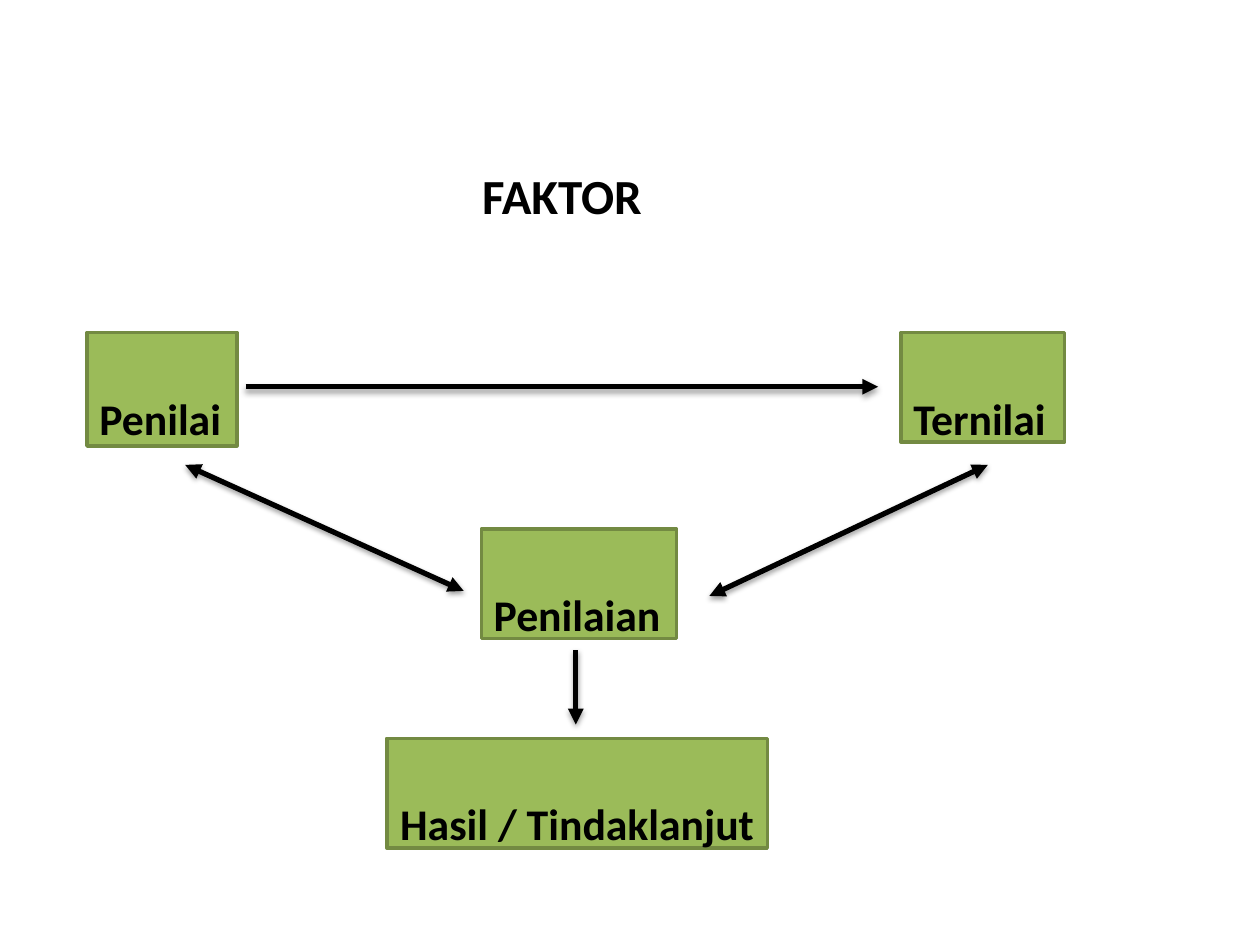
from dataclasses import dataclass

from lxml import etree
from pptx import Presentation
from pptx.dml.color import RGBColor
from pptx.enum.shapes import MSO_CONNECTOR, MSO_SHAPE
from pptx.enum.text import MSO_ANCHOR, PP_ALIGN
from pptx.oxml.ns import qn
from pptx.util import Pt

RECTANGLE = MSO_SHAPE.RECTANGLE
STRAIGHT = MSO_CONNECTOR.STRAIGHT
TOP, MIDDLE = MSO_ANCHOR.TOP, MSO_ANCHOR.MIDDLE
LEFT, CENTER = PP_ALIGN.LEFT, PP_ALIGN.CENTER

COLORS = {"text": "000000", "arrow": "000000", "box": "9BBB59", "border": "738A42"}
FONT = "Calibri"


@dataclass
class Box:
    label: str
    left: float
    top: float
    width: float
    height: float = 62.64
    align: int = LEFT
    wrap: bool = False


@dataclass
class Arrow:
    start: tuple[float, float]
    end: tuple[float, float]
    both_ways: bool = True


def color(key: str) -> RGBColor:
    return RGBColor.from_string(COLORS[key])


def write_label(shape, label: str, size: float, align, anchor, wrap: bool, spacing: float) -> None:
    frame = shape.text_frame
    frame.text = label
    frame.word_wrap = wrap
    frame.vertical_anchor = anchor
    paragraph = frame.paragraphs[0]
    paragraph.alignment = align
    paragraph.line_spacing = spacing
    font = paragraph.runs[0].font
    font.name, font.size, font.bold = FONT, Pt(size), True
    font.color.rgb = color("text")


def draw_box(slide, box: Box) -> None:
    shape = slide.shapes.add_shape(
        RECTANGLE, Pt(box.left), Pt(box.top), Pt(box.width), Pt(box.height))
    shape.shadow.inherit = False
    shape.fill.solid()
    shape.fill.fore_color.rgb = color("box")
    shape.line.color.rgb = color("border")
    shape.line.width = Pt(2)
    write_label(shape, box.label, 25, box.align, TOP, box.wrap, 2.0)


def draw_arrow(slide, arrow: Arrow) -> None:
    points = [Pt(value) for value in arrow.start + arrow.end]
    connector = slide.shapes.add_connector(STRAIGHT, *points)
    connector.line.color.rgb = color("arrow")
    connector.line.width = Pt(3)
    line = connector.line._get_or_add_ln()
    for tag in ("a:headEnd", "a:tailEnd") if arrow.both_ways else ("a:tailEnd",):
        etree.SubElement(line, qn(tag), type="triangle")
    # Soft shadow straight below the line
    effects = etree.SubElement(connector._element.spPr, qn("a:effectLst"))
    shadow = etree.SubElement(
        effects, qn("a:outerShdw"), blurRad=str(Pt(3.1)), dist=str(Pt(1.6)),
        dir="5400000", rotWithShape="0")
    tint = etree.SubElement(shadow, qn("a:srgbClr"), val=COLORS["arrow"])
    etree.SubElement(tint, qn("a:alpha"), val="38000")


BOXES = [
    Box("Penilai", 49.68, 190.08, 85.68, 64.8, wrap=True),
    Box("Ternilai", 514.8, 190.08, 93.6),
    Box("Penilaian", 275.04, 302.4, 111.6),
    Box("Hasil / Tindaklanjut ", 221.04, 421.92, 217.44, align=CENTER, wrap=True),
]
ARROWS = [
    Arrow((140.4, 221.04), (501.84, 221.04), both_ways=False),
    Arrow((105.84, 265.68), (264.96, 337.68)),
    Arrow((405.36, 340.56), (564.48, 265.68)),
    Arrow((329.04, 371.52), (329.04, 414), both_ways=False),
]


def main() -> None:
    presentation = Presentation()
    presentation.slide_width, presentation.slide_height = Pt(720), Pt(540)
    slide = presentation.slides.add_slide(presentation.slide_layouts[6])

    # Heading
    heading = slide.shapes.add_textbox(Pt(200.88), Pt(89.28), Pt(240.48), Pt(44.64))
    write_label(heading, "FAKTOR", 28, CENTER, MIDDLE, True, 1.0)

    # Assessment parties and results
    for box in BOXES:
        draw_box(slide, box)

    # Relations between them
    for arrow in ARROWS:
        draw_arrow(slide, arrow)

    presentation.save("out.pptx")


if __name__ == "__main__":
    main()
